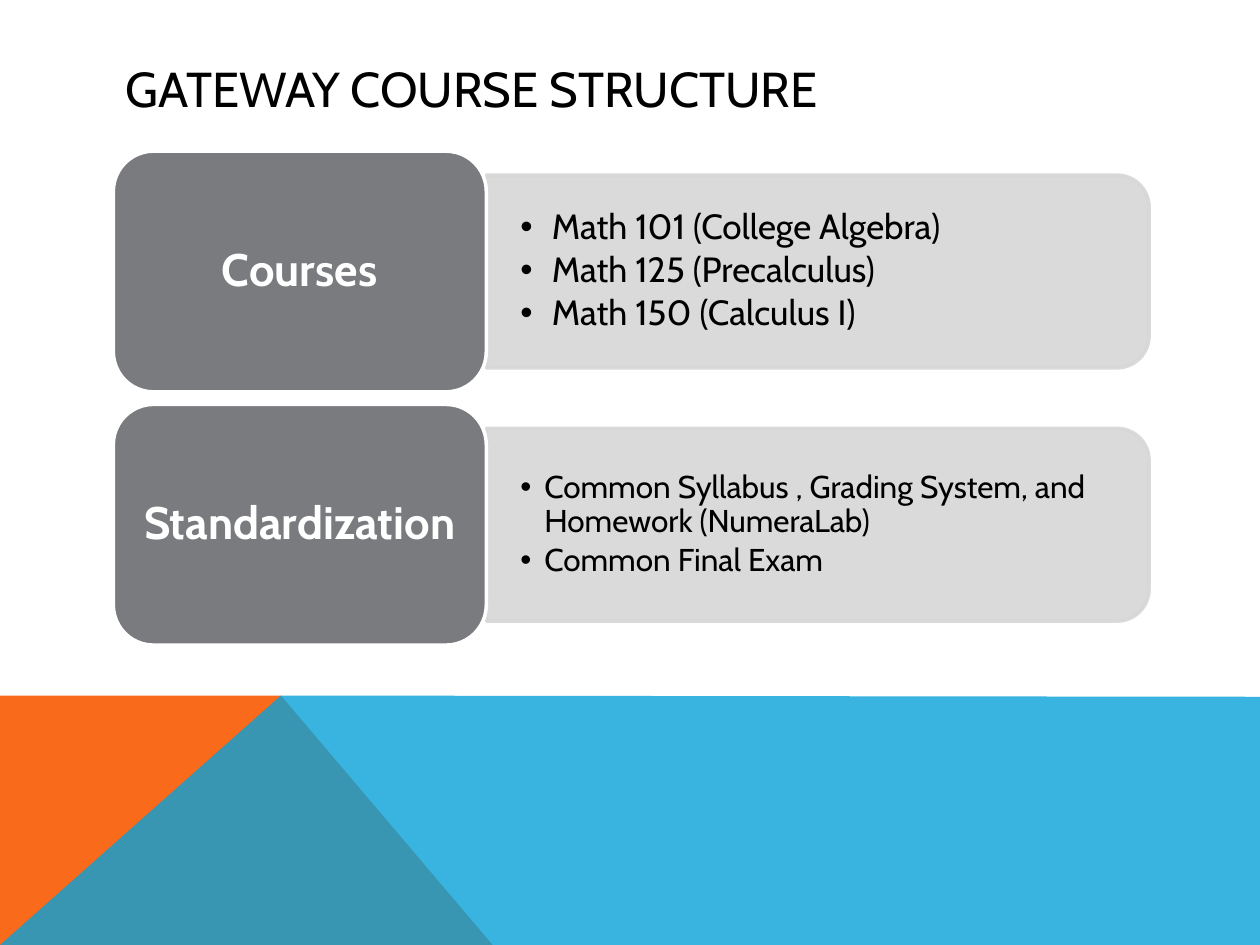
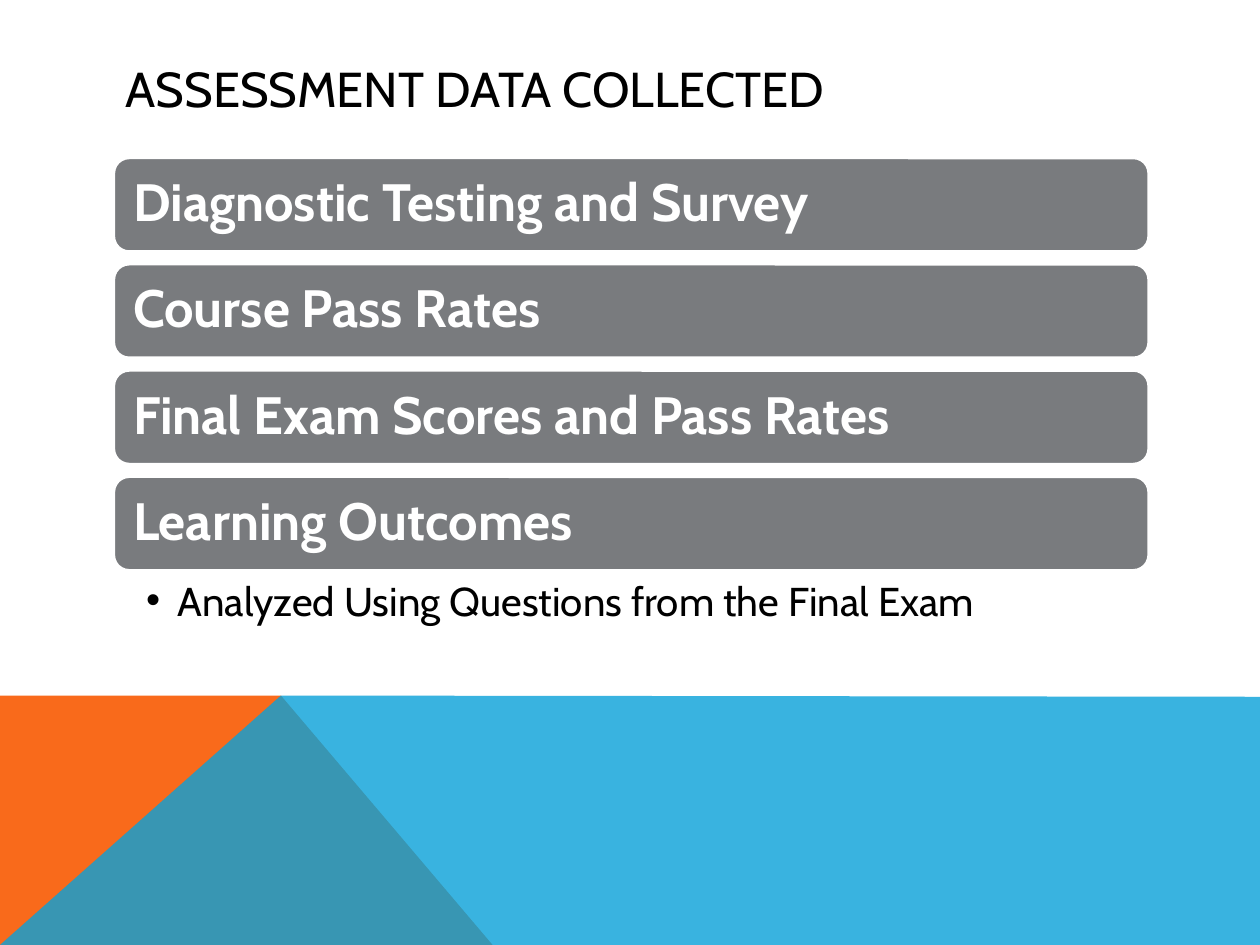
"""Build two slides on gateway mathematics courses and their assessment."""
from dataclasses import dataclass
from typing import Any

from lxml import etree
from pptx import Presentation
from pptx import util as u
from pptx.dml.color import RGBColor
from pptx.enum import shapes, text
from pptx.oxml import ns


@dataclass(frozen=True)
class Theme:
    font: str = "Cabin"
    black: str = "000000"
    white: str = "FFFFFF"
    gray: str = "797B7E"
    pale: str = "D7D7D8"
    orange: str = "F96A1B"
    blue: str = "08A1D9"
    title_size: float = 28
    label_size: float = 26
    bar_size: float = 30
    note_size: float = 23
    outline: float = 2


@dataclass(frozen=True)
class Box:
    left: float
    top: float
    width: float
    height: float

    def lengths(self) -> tuple[u.Length, ...]:
        return tuple(u.Inches(n) for n in (self.left, self.top, self.width, self.height))


@dataclass(frozen=True)
class TextStyle:
    size: float
    color: str
    bold: bool = False
    align: Any = text.PP_ALIGN.LEFT
    anchor: Any = text.MSO_ANCHOR.MIDDLE
    insets: tuple[float, float, float, float] = (0.1, 0.05, 0.1, 0.05)
    line_spacing: float = 1.0
    space_after: float = 0.0
    bullet_indent: float = 0.0


@dataclass(frozen=True)
class Topic:
    label: str
    points: tuple[str, ...]
    size: float
    indent: float


@dataclass(frozen=True)
class Band:
    points: tuple[tuple[float, float], ...]
    color: str
    opacity: int = 100


THEME = Theme()
BAND_TOP, PEAK = 5.52, 2.23
BANDS = (
    Band(((0, 7.5), (0, BAND_TOP), (PEAK, BAND_TOP), (3.91, 7.5)), THEME.orange),
    Band(((0, 7.5), (PEAK, BAND_TOP), (10, 5.53), (10, 7.5)), THEME.blue, 80),
)
TITLE_BOX = Box(0.9, 0.4, 8.22, 0.6)
TITLE_STYLE = TextStyle(THEME.title_size, THEME.black)
LABEL_STYLE = TextStyle(
    THEME.label_size, THEME.white, True, text.PP_ALIGN.CENTER,
    insets=(0.11, 0.05, 0.11, 0.05), line_spacing=0.9,
)
BAR_STYLE = TextStyle(
    THEME.bar_size, THEME.white, True, insets=(0.12,) * 4, line_spacing=0.9,
)
NOTE_STYLE = TextStyle(
    THEME.note_size, THEME.black, anchor=text.MSO_ANCHOR.TOP,
    insets=(0.26, 0.04, 0.23, 0.04), bullet_indent=0.25,
)
TOPICS = (
    Topic("Courses", (
        "Math 101 (College Algebra)",
        "Math 125 (Precalculus)",
        "Math 150 (Calculus I)",
    ), 20, 0.25),
    Topic("Standardization", (
        "Common Syllabus , Grading System, and Homework (NumeraLab)",
        "Common Final Exam",
    ), 18, 0.19),
)
MEASURES = (
    "Diagnostic Testing and Survey",
    "Course Pass Rates",
    "Final Exam Scores and Pass Rates",
    "Learning Outcomes",
)


def apply(target: Any, values: dict[str, Any]) -> None:
    for name, value in values.items():
        setattr(target, name, value)


def paint(fill: Any, color: str, opacity: int = 100) -> None:
    fill.solid()
    fill.fore_color.rgb = RGBColor.from_string(color)
    if opacity < 100:
        for element in fill._xPr.iterfind(".//" + ns.qn("a:solidFill") + "/" + ns.qn("a:srgbClr")):
            if not len(element):
                etree.SubElement(element, ns.qn("a:alpha"), val=str(opacity * 1000))


def write(shape: Any, lines: tuple[str, ...], style: TextStyle) -> None:
    frame = shape.text_frame
    left, top, right, bottom = (u.Inches(inset) for inset in style.insets)
    apply(frame, {
        "word_wrap": True, "vertical_anchor": style.anchor,
        "margin_left": left, "margin_top": top,
        "margin_right": right, "margin_bottom": bottom,
    })
    for index, line in enumerate(lines):
        paragraph = frame.paragraphs[0] if index == 0 else frame.add_paragraph()
        apply(paragraph, {
            "alignment": style.align, "line_spacing": style.line_spacing,
            "space_after": u.Pt(style.size * style.space_after),
        })
        if style.bullet_indent:
            properties = paragraph._p.get_or_add_pPr()
            indent = u.Inches(style.bullet_indent)
            properties.set("marL", str(indent))
            properties.set("indent", str(-indent))
            etree.SubElement(properties, ns.qn("a:buFont"), typeface="Arial")
            etree.SubElement(properties, ns.qn("a:buChar"), char="•")
        run = paragraph.add_run()
        run.text = line
        apply(run.font, {"name": THEME.font, "size": u.Pt(style.size), "bold": style.bold})
        run.font.color.rgb = RGBColor.from_string(style.color)


def add_text(slide: Any, box: Box, lines: tuple[str, ...], style: TextStyle) -> None:
    write(slide.shapes.add_textbox(*box.lengths()), lines, style)


def add_block(slide: Any, kind: Any, box: Box, fill: str, line: str, opacity: int = 100) -> Any:
    shape = slide.shapes.add_shape(kind, *box.lengths())
    shape.shadow.inherit = False
    paint(shape.fill, fill, opacity)
    paint(shape.line.fill, line, opacity)
    shape.line.width = u.Pt(THEME.outline)
    return shape


def add_label(slide: Any, box: Box, label: str, style: TextStyle) -> None:
    block = add_block(slide, shapes.MSO_SHAPE.ROUNDED_RECTANGLE, box, THEME.gray, THEME.white)
    write(block, (label,), style)


def add_band(slide: Any, band: Band) -> None:
    start, *rest = [(u.Inches(x), u.Inches(y)) for x, y in band.points]
    builder = slide.shapes.build_freeform(*start)
    builder.add_line_segments(rest, close=True)
    shape = builder.convert_to_shape()
    shape.shadow.inherit = False
    paint(shape.fill, band.color, band.opacity)
    shape.line.fill.background()


def start_slide(presentation: Any, title: str) -> Any:
    slide = presentation.slides.add_slide(presentation.slide_layouts[6])
    for band in BANDS:
        add_band(slide, band)
    add_text(slide, TITLE_BOX, (title,), TITLE_STYLE)
    return slide


def add_topic(slide: Any, topic: Topic, top: float) -> None:
    label = Box(TITLE_BOX.left, top, 2.96, 1.91)
    panel_left = label.left + label.width
    middle = top + label.height / 2
    length, depth = 5.26, 1.53
    upright = Box(panel_left + (length - depth) / 2, middle - length / 2, depth, length)
    panel = add_block(slide, shapes.MSO_SHAPE.ROUND_2_SAME_RECTANGLE, upright,
                      THEME.pale, THEME.pale, 90)
    panel.rotation = 90
    style = TextStyle(topic.size, THEME.black, insets=(0.27, 0.14, 0.27, 0.14),
                      line_spacing=0.9, space_after=0.15, bullet_indent=topic.indent)
    add_text(slide, Box(panel_left, middle - 0.69, 5.19, 1.38), topic.points, style)
    add_label(slide, label, topic.label, LABEL_STYLE)


def build_structure(presentation: Any) -> None:
    slide = start_slide(presentation, "GATEWAY COURSE STRUCTURE")
    for index, topic in enumerate(TOPICS):
        add_topic(slide, topic, 1.2 + index * 2.01)


def build_assessment(presentation: Any) -> None:
    slide = start_slide(presentation, "ASSESSMENT DATA COLLECTED")
    first, last, height = 1.25, 3.78, 0.75
    step = (last - first) / (len(MEASURES) - 1)
    for index, measure in enumerate(MEASURES):
        box = Box(TITLE_BOX.left, first + index * step, TITLE_BOX.width, height)
        add_label(slide, box, measure, BAR_STYLE)
    add_text(slide, Box(TITLE_BOX.left, last + height, TITLE_BOX.width, 0.54),
             ("Analyzed Using Questions from the Final Exam",), NOTE_STYLE)


def main() -> None:
    presentation = Presentation()
    apply(presentation, {"slide_width": u.Inches(10), "slide_height": u.Inches(7.5)})
    build_structure(presentation)
    build_assessment(presentation)
    presentation.save("out.pptx")


if __name__ == "__main__":
    main()
